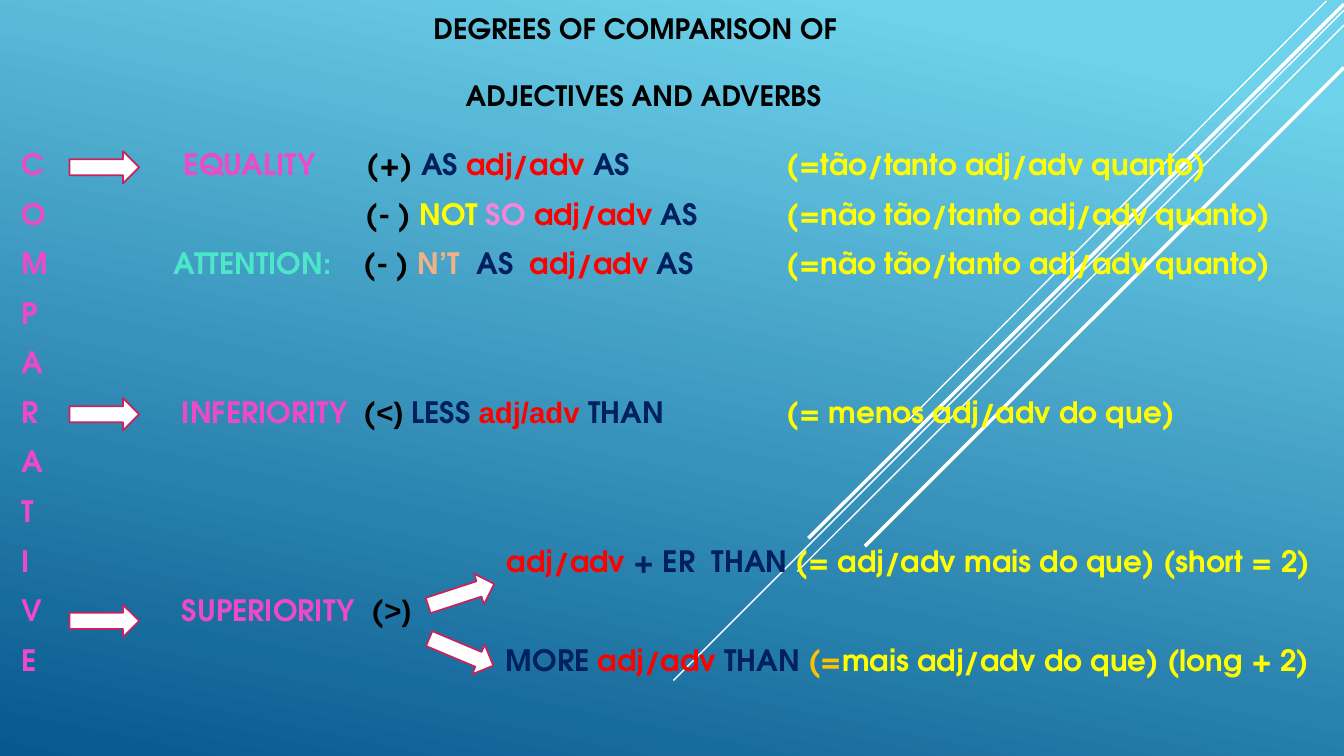
import pptx
import pptx.util
import pptx.dml.color
import pptx.enum.shapes
import pptx.enum.text
import pptx.oxml.ns
from lxml import etree

Pt = pptx.util.Pt
FONT = "TeX Gyre Adventor"
COLORS = {
    "sky": "6ED2EB", "deep": "06588E", "white": "FFFFFF", "black": "000000",
    "pink": "EF48C9", "navy": "002060", "red": "FF0000", "yellow": "FFFF00",
    "rose": "F585DB", "teal": "4BE7C8", "peach": "F1B187", "amber": "FFC000",
    "crimson": "C6235F",
}
RAYS = [
    (947.5, 0.7, 648, 301, 1), (960, 7.2, 481, 486, 1),
    (960, 18, 569.5, 408.2, 1), (960, 2.9, 577.4, 384.5, 2.5),
    (960, 48.2, 617.8, 390.2, 2.5),
]
ARROWS = [
    (49.7, 108, 0), (49.7, 284.4, 0), (304.6, 413.3, 341.9),
    (304.6, 454.3, 22.9), (49.7, 432, 0),
]
ADJ = ("adj/adv ", "red")
AS = ("AS", "navy")
ROWS = [
    ([115.7, 246.4, 546.4], [
        ("C\tEQUALITY", "pink"), ("\t(+) ", "black"), ("AS ", "navy"), ADJ, AS,
        ("\t(=tão/tanto adj/adv quanto)", "yellow")]),
    ([245.7, 546.4], [
        ("O", "pink"), ("\t(- ) ", "black"), ("NOT ", "yellow"), ("SO ", "rose"), ADJ, AS,
        ("\t(=não tão/tanto adj/adv quanto)", "yellow")]),
    ([108.6, 244.3, 546.4], [
        ("M", "pink"), ("\tATTENTION:", "teal"), ("\t(- ) ", "black"), ("N’T ", "peach"),
        (" AS  ", "navy"), ADJ, AS, ("\t(=não tão/tanto adj/adv quanto)", "yellow")]),
    ([], [("P", "pink")]),
    ([], [("A", "pink")]),
    ([114.3, 244.3, 546.4], [
        ("R\tINFERIORITY", "pink"), ("\t(", "black"), ("<) ", "black", "Arial"),
        ("LESS ", "navy"), (*ADJ, "Arial"), ("THAN", "navy"),
        ("\t(= menos adj/adv do que)", "yellow")]),
    ([], [("A", "pink")]),
    ([], [("T", "pink")]),
    ([346.4], [
        ("I\t", "pink"), ADJ, ("+ ER  THAN ", "navy"),
        ("(= adj/adv mais do que) (short = 2)", "yellow")]),
    ([114.3, 250], [
        ("V\tSUPERIORITY", "pink"), ("\t(", "black"), (">)", "black", "Arial")]),
    ([345.7], [
        ("E\t", "pink"), ("MORE ", "navy"), ADJ, ("THAN ", "navy"), ("(=", "amber"),
        ("mais adj/adv do que) (long + 2)", "yellow")]),
]


def rgb(name):
    """Return the named colour."""
    return pptx.dml.color.RGBColor.from_string(COLORS[name])


def apply(obj, **values):
    """Set attributes from a dict of format values."""
    for key, value in values.items():
        setattr(obj, key, value)


def add_run(p, text, color, size, font=FONT):
    """Add one bold coloured run to a paragraph."""
    r = p.add_run()
    r.text = text
    apply(r.font, name=font, size=Pt(size), bold=True)
    r.font.color.rgb = rgb(color)


def set_tabs(p, stops):
    """Give a paragraph left tab stops at the given points."""
    qn = pptx.oxml.ns.qn
    tabs = etree.SubElement(p._p.get_or_add_pPr(), qn("a:tabLst"))
    for stop in stops:
        etree.SubElement(tabs, qn("a:tab"), pos=str(int(Pt(stop))), algn="l")


def draw_background(s):
    """Fill the slide with a gradient and cross it with diagonal rays."""
    fill = s.background.fill
    fill.gradient()
    fill.gradient_angle = 258
    for stop, color, position in zip(fill.gradient_stops, ("sky", "deep"), (0.1, 1)):
        stop.color.rgb = rgb(color)
        stop.position = position
    for x1, y1, x2, y2, width in RAYS:
        ray = s.shapes.add_connector(
            pptx.enum.shapes.MSO_CONNECTOR.STRAIGHT, Pt(x1), Pt(y1), Pt(x2), Pt(y2))
        ray.line.color.rgb = rgb("white")
        ray.line.width = Pt(width)
        etree.SubElement(ray._element.spPr, pptx.oxml.ns.qn("a:effectLst"))


def write_title(s, left, top, width, height):
    """Place the two-line heading in the title placeholder."""
    sp = s.shapes.title
    apply(sp, left=Pt(left), top=Pt(top), width=Pt(width), height=Pt(height))
    tf = sp.text_frame
    apply(tf, word_wrap=True, auto_size=pptx.enum.text.MSO_AUTO_SIZE.NONE,
          vertical_anchor=pptx.enum.text.MSO_ANCHOR.BOTTOM)
    lines = [("DEGREES OF COMPARISON OF", 0, 0), ("ADJECTIVES AND ADVERBS", 23, 24)]
    for i, (text, indent, before) in enumerate(lines):
        p = tf.add_paragraph() if i else tf.paragraphs[0]
        apply(p, alignment=pptx.enum.text.PP_ALIGN.LEFT, line_spacing=1.0,
              space_before=Pt(before), space_after=Pt(0))
        p._p.get_or_add_pPr().set("marL", str(int(Pt(indent))))
        add_run(p, text, "black", 20)


def write_comparatives(s, left, top, width, height):
    """Write the comparative forms as tabbed rows."""
    tf = s.shapes.add_textbox(Pt(left), Pt(top), Pt(width), Pt(height)).text_frame
    tf.word_wrap = True
    for i, (stops, runs) in enumerate(ROWS):
        p = tf.add_paragraph() if i else tf.paragraphs[0]
        apply(p, space_before=Pt(4.2), space_after=Pt(6))
        if stops:
            set_tabs(p, stops)
        for text, color, *font in runs:
            add_run(p, text, color, 21, *font)


def draw_arrows(s, width, height):
    """Draw the block arrows that lead to each degree."""
    for left, top, rotation in ARROWS:
        sp = s.shapes.add_shape(
            pptx.enum.shapes.MSO_SHAPE.RIGHT_ARROW, Pt(left), Pt(top), Pt(width), Pt(height))
        sp.rotation = rotation
        sp.shadow.inherit = False
        sp.fill.solid()
        sp.fill.fore_color.rgb = rgb("white")
        sp.line.color.rgb = rgb("crimson")
        sp.line.width = Pt(1.25)


def main():
    """Build and save the slide."""
    prs = pptx.Presentation()
    apply(prs, slide_width=Pt(960), slide_height=Pt(540))
    s = prs.slides.add_slide(prs.slide_layouts[5])
    draw_background(s)
    write_title(s, 302.4, 0, 320.4, 83.5)
    write_comparatives(s, 8.6, 100.8, 942.5, 431.3)
    draw_arrows(s, 49.7, 23)
    prs.save("out.pptx")


if __name__ == "__main__":
    main()
